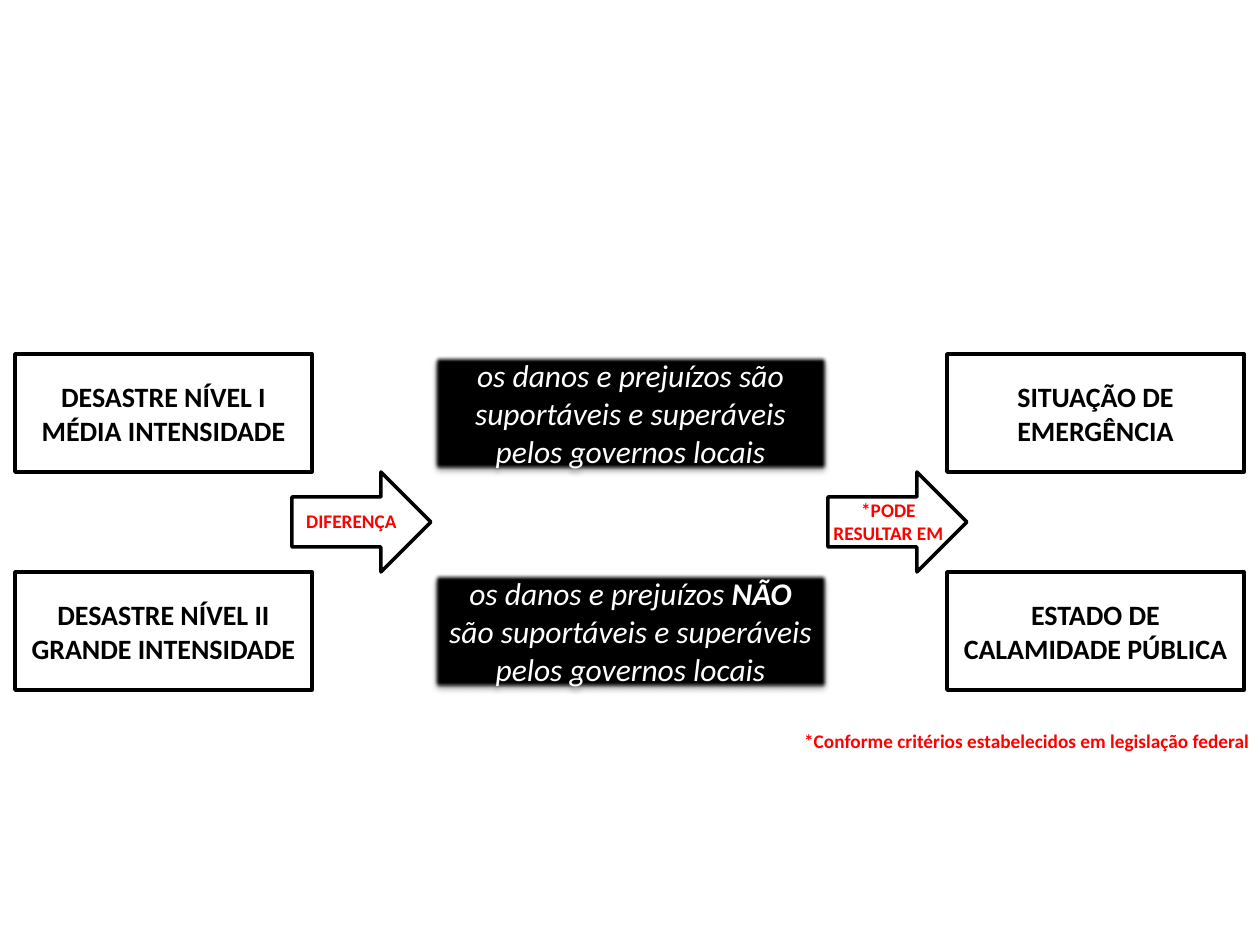
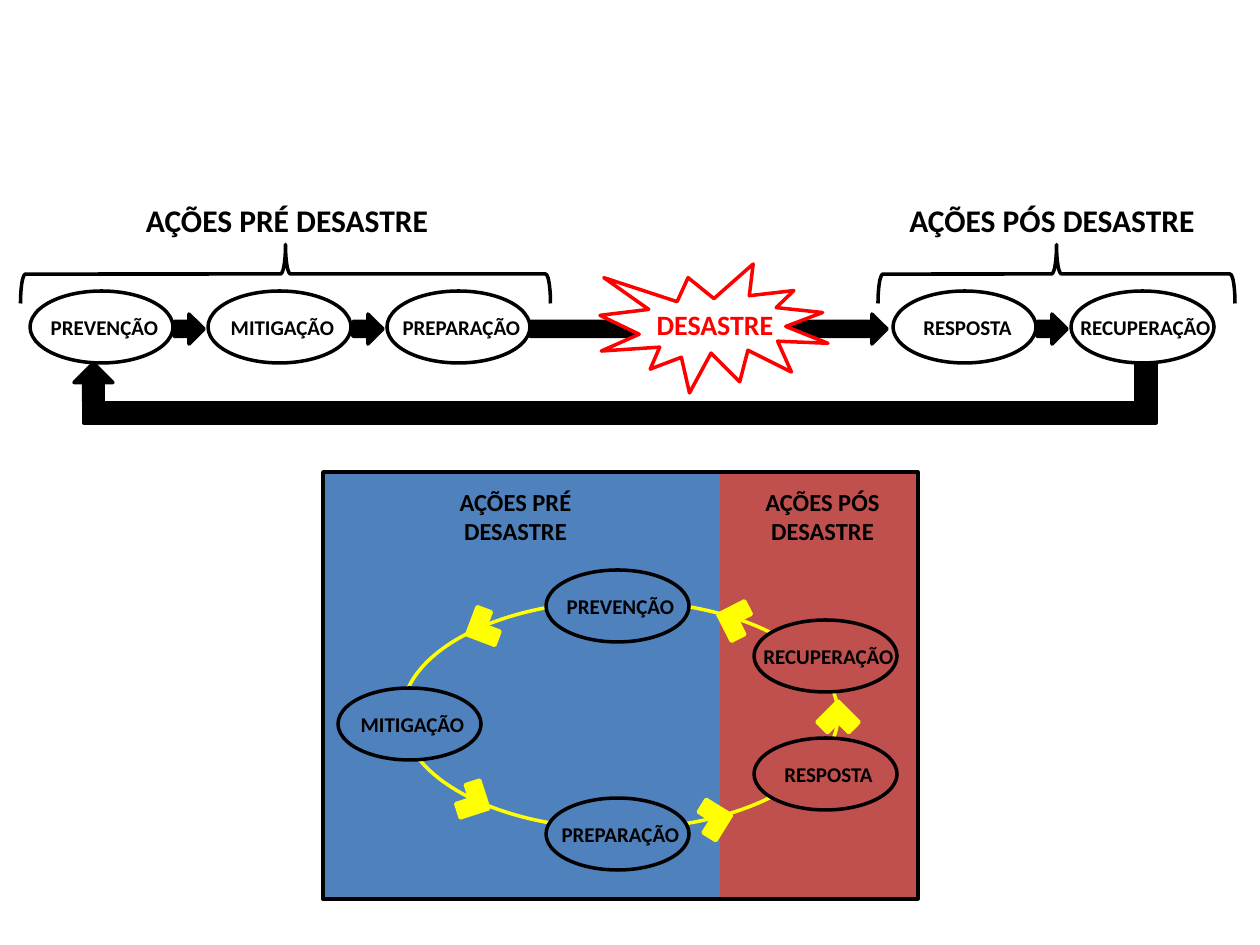
"""Two slides on disaster levels and the disaster management cycle."""
from lxml.etree import SubElement
from pptx import Presentation
from pptx.dml.color import RGBColor
from pptx.enum.shapes import MSO_SHAPE as Kind
from pptx.enum.text import MSO_ANCHOR, PP_ALIGN
from pptx.oxml.ns import qn
from pptx.util import Pt

SCALE = 914400 / 126
FONT = "Calibri"
BLACK = RGBColor(0x00, 0x00, 0x00)
WHITE = RGBColor(0xFF, 0xFF, 0xFF)
RED = RGBColor(0xFF, 0x00, 0x00)
YELLOW = RGBColor(0xFF, 0xFF, 0x00)
BLUE = RGBColor(0x4F, 0x81, 0xBD)
BRICK = RGBColor(0xC0, 0x50, 0x4D)


def draw(slide, kind, box, fill=None, line=BLACK, turn=0):
    shape = slide.shapes.add_shape(kind, *[round(n * SCALE) for n in box])
    shape.shadow.inherit = False
    shape.rotation = turn
    if fill is None:
        shape.fill.background()
    else:
        shape.fill.solid()
        shape.fill.fore_color.rgb = fill
    if line is None:
        shape.line.fill.background()
    else:
        shape.line.color.rgb = line
        shape.line.width = Pt(2)
    return shape


def write(slide, box, parts, size, color=BLACK, shape=None, italic=False):
    if shape is None:
        shape = slide.shapes.add_textbox(*[round(n * SCALE) for n in box])
    frame = shape.text_frame
    frame.word_wrap = True
    frame.vertical_anchor = MSO_ANCHOR.MIDDLE
    para = frame.paragraphs[0]
    para.alignment = PP_ALIGN.CENTER
    for part in parts:
        run = para.add_run()
        run.text = part
        run.font.name = FONT
        run.font.size = Pt(size)
        run.font.color.rgb = color
        run.font.bold = not italic or part == "NÃO"
        run.font.italic = italic


deck = Presentation()
deck.slide_width = round(1260 * SCALE)
deck.slide_height = round(945 * SCALE)
blank = deck.slide_layouts[6]

levels = deck.slides.add_slide(blank)
for left in (292, 828):
    draw(levels, Kind.RIGHT_ARROW, (left, 472, 139, 100), WHITE)

rows = [
    (354, "DESASTRE NÍVEL I MÉDIA INTENSIDADE",
     ["os danos e prejuízos são suportáveis e superáveis pelos governos locais"],
     "SITUAÇÃO DE EMERGÊNCIA"),
    (572, "DESASTRE NÍVEL II GRANDE INTENSIDADE",
     ["os danos e prejuízos ", "NÃO",
      " são suportáveis e superáveis pelos governos locais"],
     "ESTADO DE CALAMIDADE PÚBLICA"),
]
for top, level, damage, status in rows:
    for left, text in ((15, level), (947, status)):
        box = (left, top, 297, 118)
        write(levels, box, [text], 16, shape=draw(levels, Kind.RECTANGLE, box, WHITE))
    box = (432, top, 397, 118)
    panel = draw(levels, Kind.RECTANGLE, box, BLACK)
    panel.line.width = Pt(0.75)
    effect = panel._element.spPr.find(qn("a:effectLst"))
    shade = SubElement(effect, qn("a:outerShdw"), blurRad=str(Pt(3.1)),
                       dist=str(Pt(1.8)), dir="5400000", rotWithShape="0")
    tint = SubElement(shade, qn("a:srgbClr"), val=str(BLACK))
    SubElement(tint, qn("a:alpha"), val="35000")
    SubElement(effect, qn("a:softEdge"), rad=str(Pt(2.5)))
    write(levels, box, damage, 18, WHITE, panel, True)

for box, text in [
    ((282, 491, 139, 60), "DIFERENÇA"),
    ((819, 491, 139, 60), "*PODE RESULTAR EM"),
    ((789, 711, 476, 60), "*Conforme critérios estabelecidos em legislação federal"),
]:
    write(levels, box, [text], 11, RED)

cycle = deck.slides.add_slide(blank)
draw(cycle, Kind.RECTANGLE, (720, 472, 198, 427), BRICK, None)
draw(cycle, Kind.RECTANGLE, (323, 472, 397, 427), BLUE, None)
draw(cycle, Kind.OVAL, (402, 601, 436, 228), line=YELLOW)
draw(cycle, Kind.RIGHT_ARROW, (530, 314, 357, 30), BLACK)
draw(cycle, Kind.EXPLOSION1, (600, 264, 228, 129), WHITE, RED)
write(cycle, (591, 275, 248, 99), ["DESASTRE"], 16, RED)

stages = [
    ("PREVENÇÃO", 30, 291, WHITE),
    ("MITIGAÇÃO", 208, 291, WHITE),
    ("PREPARAÇÃO", 387, 291, WHITE),
    ("RESPOSTA", 893, 291, WHITE),
    ("RECUPERAÇÃO", 1071, 291, WHITE),
    ("PREVENÇÃO", 546, 570, BLUE),
    ("MITIGAÇÃO", 338, 688, BLUE),
    ("PREPARAÇÃO", 546, 798, BLUE),
    ("RECUPERAÇÃO", 754, 620, BRICK),
    ("RESPOSTA", 754, 738, BRICK),
]
for name, left, top, fill in stages:
    draw(cycle, Kind.OVAL, (left, top, 143, 72), fill)
    write(cycle, (left - 15, top - 8, 179, 89), [name], 12)

for left in (174, 353, 1037):
    draw(cycle, Kind.RIGHT_ARROW, (left, 314, 30, 30), BLACK)

for mid, span in ((285, 530), (1056, 357)):
    draw(cycle, Kind.LEFT_BRACE, (mid - 29, 274 - span / 2, 59, span), turn=90)

for text, wide, small in (("AÇÕES PRÉ DESASTRE", 123, 441),
                          ("AÇÕES PÓS DESASTRE", 888, 748)):
    write(cycle, (wide, 175, 328, 89), [text], 18)
    write(cycle, (small, 472, 149, 89), [text], 14)

for left, top, turn in [(471, 611, 20.7), (455, 784, 252.1), (696, 805, 211.8),
                        (823, 707, 135), (723, 606, 62.9)]:
    corner = draw(cycle, Kind.RECTANGLE, (left, top, 30, 30), YELLOW, YELLOW, turn)
    corner._element.spPr.find(qn("a:prstGeom")).set("prst", "corner")

draw(cycle, Kind.RECTANGLE, (323, 472, 595, 427))
draw(cycle, Kind.RIGHT_ARROW, (74, 363, 39, 39), BLACK, turn=270)
draw(cycle, Kind.RECTANGLE, (84, 403, 1072, 20), BLACK)
draw(cycle, Kind.RECTANGLE, (1136, 363, 20, 39), BLACK)

deck.save("out.pptx")
